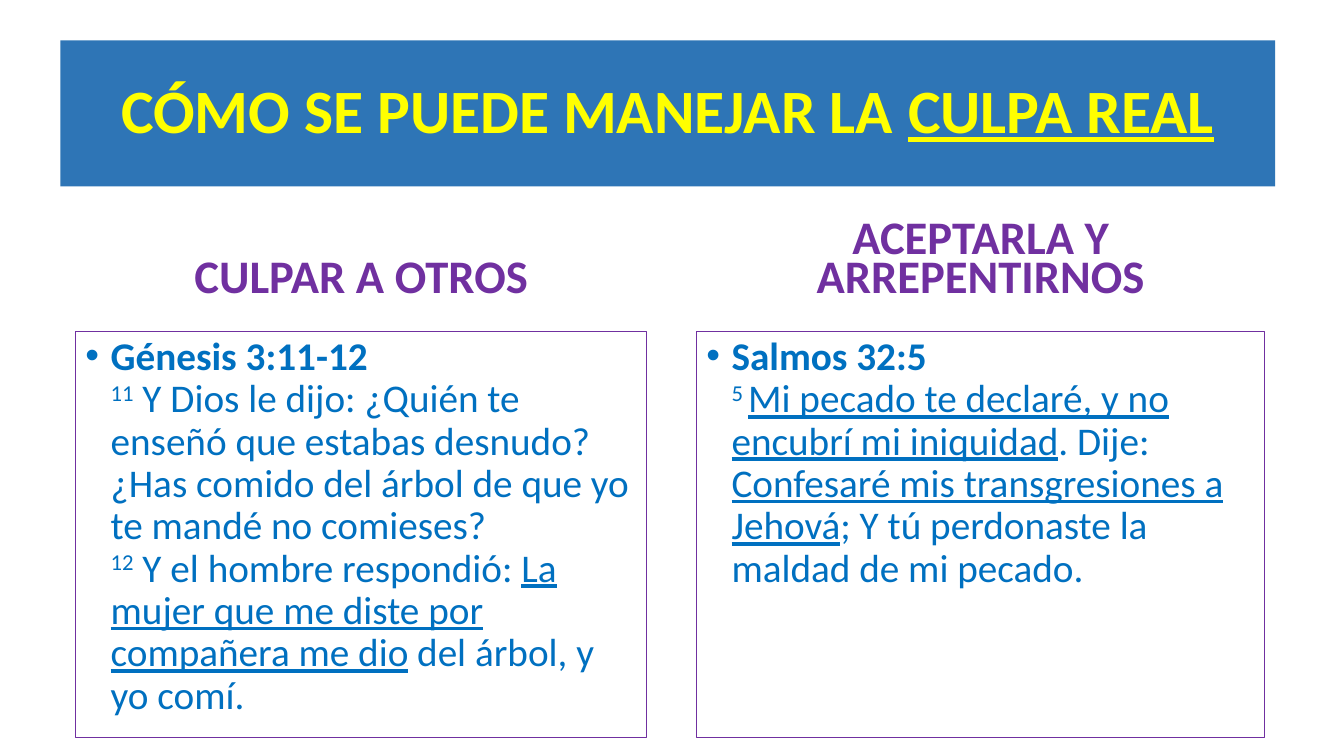
"""Build a slide that sets two ways of handling real guilt side by side."""
from lxml.etree import SubElement
from pptx import Presentation
from pptx.dml.color import RGBColor
from pptx.enum.shapes import MSO_SHAPE as SHAPE
from pptx.enum.text import MSO_ANCHOR as ANCHOR, PP_ALIGN as ALIGN
from pptx.oxml.ns import qn
from pptx.util import Pt

hue = RGBColor.from_string


def box(left, top, width, height, anchor, space):
    shape = deck.shapes.add_shape(SHAPE.RECTANGLE, Pt(left), Pt(top), Pt(width), Pt(height))
    shape.shadow.inherit = False
    shape.fill.background()
    shape.line.fill.background()
    frame = shape.text_frame
    frame.word_wrap = True
    frame.vertical_anchor = anchor
    para = frame.paragraphs[0]
    para.alignment = ALIGN.CENTER
    para.line_spacing = space
    return shape, para


def write(para, text, size, color, style=""):
    run = para.add_run()
    run.text = text
    font = run.font
    font.name = "Calibri"
    font.size = Pt(size)
    font.color.rgb = hue(color)
    font.bold = "b" in style
    font.underline = "u" in style
    if "s" in style:
        font._element.set("baseline", "30000")


show = Presentation()
show.slide_width, show.slide_height = Pt(960), Pt(540)
deck = show.slides.add_slide(show.slide_layouts[6])

title, para = box(43.2, 28.8, 867.6, 104.4, ANCHOR.MIDDLE, 0.9)
title.fill.solid()
title.fill.fore_color.rgb = hue("2E75B6")
write(para, "CÓMO SE PUEDE MANEJAR LA ", 44, "FFFF00", "b")
write(para, "CULPA REAL", 44, "FFFF00", "bu")

columns = [
    (54, 408.2, "CULPAR A OTROS", [
        [("Génesis 3:11-12", "b")],
        [("11", "s"),
         (" Y Dios le dijo: ¿Quién te enseñó que estabas desnudo? "
          "¿Has comido del árbol de que yo te mandé no comieses?", "")],
        [("12", "s"), (" Y el hombre respondió: ", ""),
         ("La mujer que me diste por compañera me dio", "u"),
         (" del árbol, y yo comí.", "")],
    ]),
    (497.5, 406.1, "ACEPTARLA Y ARREPENTIRNOS", [
        [("Salmos 32:5", "b")],
        [("5 ", "s"), ("Mi pecado te declaré, y no encubrí mi iniquidad", "u"),
         (". Dije: ", ""), ("Confesaré mis transgresiones a Jehová", "u"),
         ("; Y tú perdonaste la maldad de mi pecado.", "")],
    ]),
]

for left, width, head, lines in columns:
    shape, para = box(left, 154.1, width, 64.8, ANCHOR.BOTTOM, 0.7)
    para.space_before = Pt(10)
    write(para, head, 33.3, "7030A0", "b")

    shape, para = box(left, 236.9, width, 290.2, ANCHOR.TOP, 0.9)
    shape.line.color.rgb = hue("7030A0")
    shape.line.width = Pt(0.75)
    para.alignment = ALIGN.LEFT
    para.space_before = Pt(10)
    props = para._p.get_or_add_pPr()
    props.set("marL", str(Pt(18)))
    props.set("indent", str(Pt(-18)))
    SubElement(props, qn("a:buFont"), typeface="Arial")
    SubElement(props, qn("a:buChar"), char="•")
    for row, line in enumerate(lines):
        if row:
            para.add_line_break()
        for text, style in line:
            write(para, text, 28, "0070C0", style)

show.save("out.pptx")
